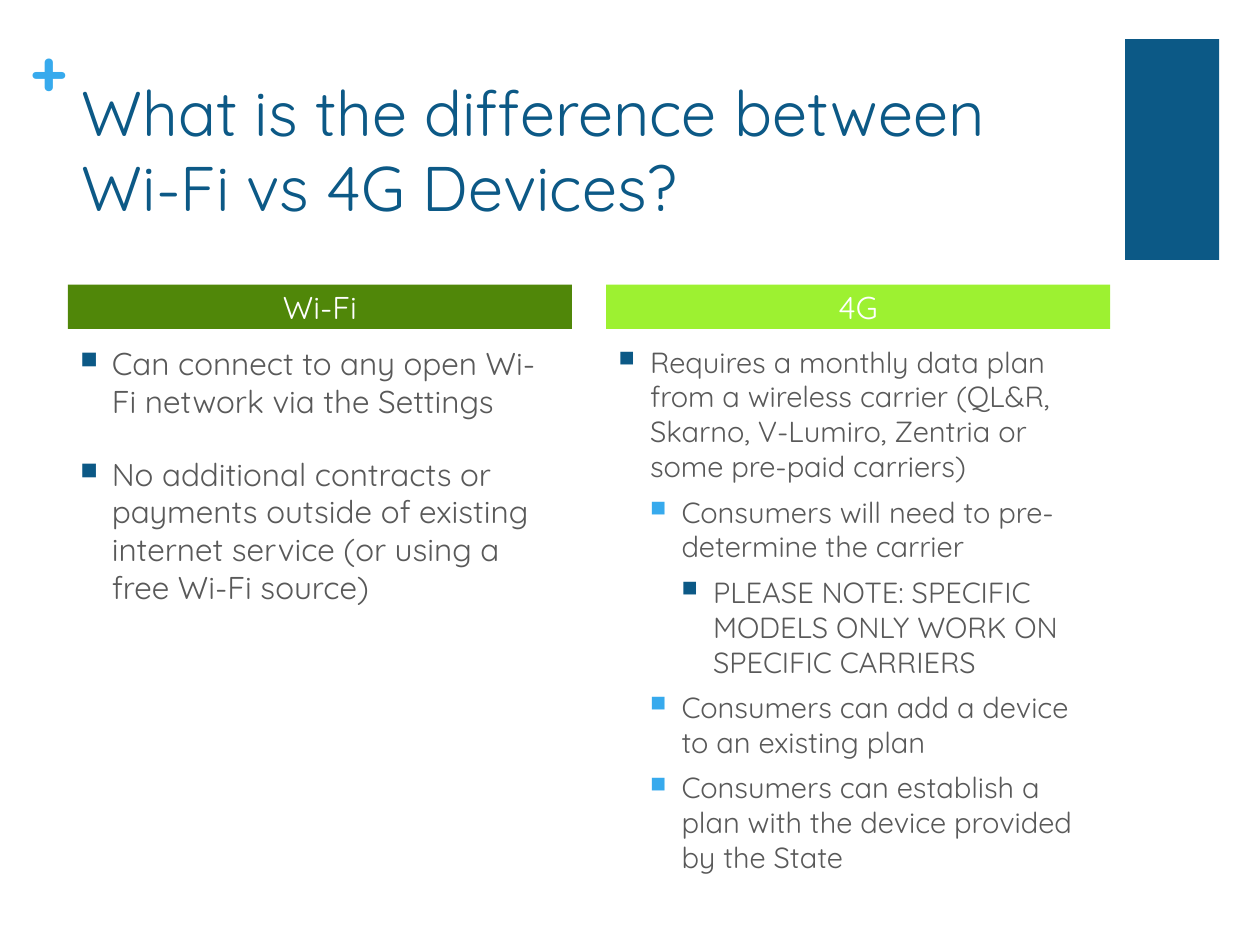
import pptx
import pptx.util
import pptx.dml.color
import pptx.enum.shapes
import pptx.enum.text
import pptx.oxml.ns
import lxml.etree

Cm, Pt = pptx.util.Cm, pptx.util.Pt
ALIGN = pptx.enum.text.PP_ALIGN
ANCHOR = pptx.enum.text.MSO_ANCHOR
NAVY, SKY, GRAY, WHITE = "0C5986", "37AAED", "595959", "FFFFFF"
STEP = 0.635  # indent per bullet level, cm

WIFI = [
    (0, "Can connect to any open Wi-Fi network via the Settings"),
    (0, "No additional contracts or payments outside of existing internet "
        "service (or using a free Wi-Fi source)"),
]
CELL = [
    (0, "Requires a monthly data plan from a wireless carrier (QL&R, Skarno, "
        "V-Lumiro, Zentria or some pre-paid carriers)"),
    (1, "Consumers will need to pre-determine the carrier"),
    (2, "PLEASE NOTE: SPECIFIC MODELS ONLY WORK ON SPECIFIC CARRIERS"),
    (1, "Consumers can add a device to an existing plan"),
    (1, "Consumers can establish a plan with the device provided by the State"),
]


def color(code):
    return pptx.dml.color.RGBColor.from_string(code)


def format(item, values):
    for name, value in values.items():
        setattr(item, name, value)


def write(para, text, size, code, bold=False):
    run = para.add_run()
    run.text = text
    format(run.font, {"name": "Quicksand", "size": Pt(size), "bold": bold})
    run.font.color.rgb = color(code)


def block(slide, box, code):
    shape = slide.shapes.add_shape(
        pptx.enum.shapes.MSO_SHAPE.RECTANGLE, *map(Cm, box))
    shape.shadow.inherit = False
    shape.fill.solid()
    shape.fill.fore_color.rgb = color(code)
    shape.line.fill.background()
    return shape


def textbox(slide, box, wrap=True):
    frame = slide.shapes.add_textbox(*map(Cm, box)).text_frame
    frame.word_wrap = wrap
    return frame


def bullet(para, level):
    format(para, {"level": level, "space_before": Pt(6 if level else 20)})
    props = para._p.get_or_add_pPr()
    props.set("marL", str(Cm(STEP * (level + 1))))
    props.set("indent", str(-Cm(STEP)))
    qn = pptx.oxml.ns.qn
    tint = lxml.etree.SubElement(props, qn("a:buClr"))
    lxml.etree.SubElement(tint, qn("a:srgbClr"), val=SKY if level == 1 else NAVY)
    lxml.etree.SubElement(props, qn("a:buSzPct"), val="75000")
    lxml.etree.SubElement(props, qn("a:buChar"), char="■")


def header(slide, box):
    left, top, width, height = box
    # Corner block and plus sign
    block(slide, (left + 22.07, top + 0.15, 1.9, 4.45), NAVY)
    plus = textbox(slide, (left, top, 0.74, 1.55), wrap=False)
    format(plus, dict.fromkeys(
        ("margin_left", "margin_right", "margin_top", "margin_bottom"), 0))
    write(plus.paragraphs[0], "+", 36, SKY, bold=True)
    # Title
    title = textbox(slide, (left + 0.79, top + 0.71, 20.98, 3.1))
    write(title.paragraphs[0],
          "What is the difference between Wi-Fi vs 4G Devices?", 36, NAVY)


def column(slide, box, label, fill, items, size):
    left, top, width, height = box
    # Heading bar
    frame = block(slide, (left, top, width, 0.89), fill).text_frame
    format(frame, {"margin_top": 0, "margin_bottom": 0, "word_wrap": True,
                   "vertical_anchor": ANCHOR.MIDDLE})
    frame.paragraphs[0].alignment = ALIGN.CENTER
    write(frame.paragraphs[0], label, 18, WHITE)
    # Bullet list
    body = textbox(slide, (left, top + 1.07, width, height - 1.07))
    for count, (level, text) in enumerate(items):
        para = body.add_paragraph() if count else body.paragraphs[0]
        bullet(para, level)
        write(para, text, size, GRAY)


def main():
    deck = pptx.Presentation()
    format(deck, {"slide_width": Cm(25.4), "slide_height": Cm(19.05)})
    slide = deck.slides.add_slide(deck.slide_layouts[6])
    header(slide, (0.61, 0.64, 23.97, 4.6))
    column(slide, (1.37, 5.74, 10.16, 11.28), "Wi-Fi", "508709", WIFI, 18)
    column(slide, (12.22, 5.74, 10.16, 11.28), "4G", "9DF131", CELL, 16.6)
    deck.save("out.pptx")


if __name__ == "__main__":
    main()
